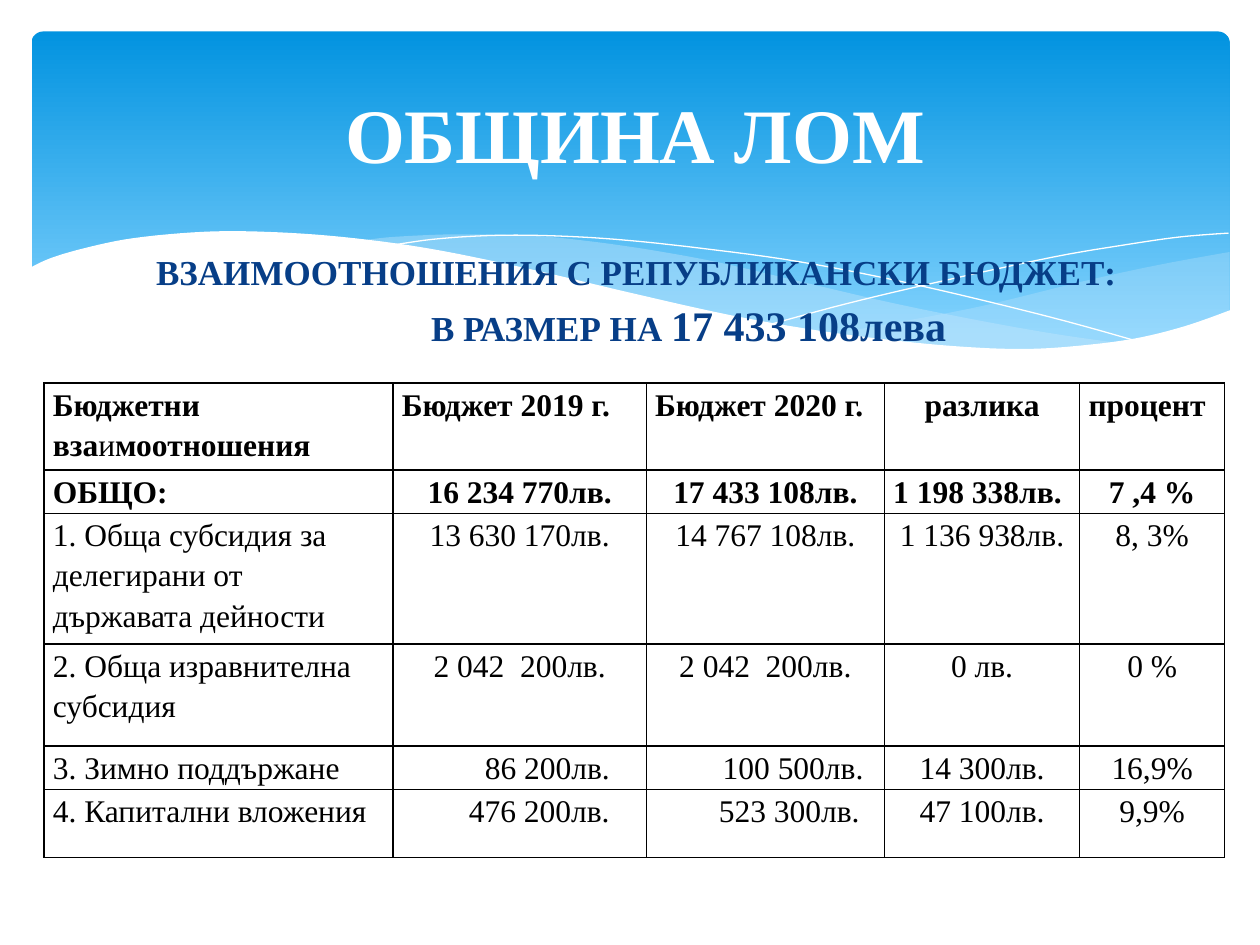
from lxml import etree
from pptx import Presentation
from pptx.dml.color import RGBColor
from pptx.enum.shapes import MSO_SHAPE
from pptx.enum.text import MSO_ANCHOR, PP_ALIGN
from pptx.oxml.ns import qn
from pptx.util import Inches, Pt

LEFT, MID = PP_ALIGN.LEFT, PP_ALIGN.CENTER
ROUND = MSO_SHAPE.ROUNDED_RECTANGLE
MIDDLE = MSO_ANCHOR.MIDDLE
SIDES = ("a:lnL", "a:lnR", "a:lnT", "a:lnB")


def color(code):
    return RGBColor.from_string(code)


def smooth(knots, steps=6):
    """Points of a Catmull-Rom curve through the knots."""
    ends = [knots[0], *knots, knots[-1]]
    points = []
    for a, b, c, d in zip(ends, ends[1:], ends[2:], ends[3:]):
        for i in range(steps):
            t = i / steps
            points.append(tuple(
                q + t * (r - p) / 2 + t * t * (p - 2.5 * q + 2 * r - s / 2)
                + t ** 3 * (1.5 * (q - r) + (s - p) / 2)
                for p, q, r, s in zip(a, b, c, d)))
    return points + [knots[-1]]


class Deck:
    font = "Times New Roman"

    def __init__(self, wide, high):
        self.prs = Presentation()
        self.prs.slide_width, self.prs.slide_height = Inches(wide), Inches(high)
        self.slide = self.prs.slides.add_slide(self.prs.slide_layouts[6])
        self.shapes = self.slide.shapes

    def panel(self, box, top, low):
        shape = self.shapes.add_shape(ROUND, *map(Inches, box))
        shape.adjustments[0] = 0.034
        shape.shadow.inherit = False
        shape.line.fill.background()
        shape.fill.gradient()
        shape.fill.gradient_angle = 270
        for stop, code, place in zip(shape.fill.gradient_stops, (top, low), (0, 0.9)):
            stop.color.rgb, stop.position = color(code), place

    def wave(self, points, fill=None, alpha=100):
        """A filled outline, or a white hairline when no fill is given."""
        spots = [(Inches(x), Inches(y)) for x, y in points]
        pen = self.shapes.build_freeform(*spots[0], scale=1.0)
        pen.add_line_segments(spots[1:], close=fill is not None)
        shape = pen.convert_to_shape()
        shape.shadow.inherit = False
        if fill is None:
            shape.fill.background()
            shape.line.color.rgb = color("FFFFFF")
            shape.line.width = 0
            return
        shape.line.fill.background()
        shape.fill.solid()
        shape.fill.fore_color.rgb = color(fill)
        if alpha < 100:
            tint = shape.fill._xPr.find(".//" + qn("a:srgbClr"))
            etree.SubElement(tint, qn("a:alpha"), val=str(alpha * 1000))

    def line(self, para, runs, code, align=LEFT, indent=0):
        """Runs are (text, size, bold)."""
        para.alignment = align
        if indent:
            para._p.get_or_add_pPr().set("marL", str(Inches(indent)))
        for text, size, bold in runs:
            run = para.add_run()
            run.text = text
            run.font.name, run.font.size, run.font.bold = self.font, Pt(size), bold
            run.font.color.rgb = color(code)

    def text(self, box, lines, code, align=LEFT, anchor=MSO_ANCHOR.TOP, before=0):
        """Lines are (indent, runs)."""
        frame = self.shapes.add_textbox(*map(Inches, box)).text_frame
        frame.word_wrap = True
        frame.vertical_anchor = anchor
        for i, (indent, runs) in enumerate(lines):
            para = frame.add_paragraph() if i else frame.paragraphs[0]
            para.space_before = Pt(before)
            self.line(para, runs, code, align, indent)

    def cell(self, cell, runs, align, indent):
        cell.margin_left = cell.margin_right = Inches(0.07)
        cell.margin_top = cell.margin_bottom = 0
        para = cell.text_frame.paragraphs[0]
        para.line_spacing = 1.15
        self.line(para, runs, "000000", align, indent)
        props = cell._tc.get_or_add_tcPr()
        for side in SIDES:
            edge = etree.SubElement(props, qn(side), w=str(Pt(1)))
            ink = etree.SubElement(edge, qn("a:solidFill"))
            etree.SubElement(ink, qn("a:srgbClr"), val="000000")
        cell.fill.background()

    def table(self, box, cols, rows, data, aligns, indents):
        grid = self.shapes.add_table(len(rows), len(cols), *map(Inches, box)).table
        grid.first_row = grid.horz_banding = False
        for col, wide in zip(grid.columns, cols):
            col.width = Inches(wide)
        for row, high in zip(grid.rows, rows):
            row.height = Inches(high)
        for r, line in enumerate(data):
            for c, value in enumerate(line):
                runs = value if isinstance(value, list) else [(value, 18, r < 2)]
                align = LEFT if c == 0 else aligns.get((r, c), MID)
                self.cell(grid.cell(r, c), runs, align, indents.get((r, c), 0))

    def save(self):
        self.prs.save("out.pptx")


# Knots of the waves in the header
BACK_TOP = [(9.76, 2), (9.21, 2.1), (8.61, 2.23), (7.79, 2.43), (7.06, 2.57), (6.61, 2.65)]
BACK_LOW = [(6.61, 2.65), (7.18, 2.73), (7.69, 2.77), (8.14, 2.78), (8.63, 2.75),
            (9.05, 2.69), (9.42, 2.59), (9.76, 2.47)]
MID_TOP = [(8.93, 2.73), (8.37, 2.65), (7.75, 2.54), (7.06, 2.4), (6.29, 2.22), (5.69, 2.08),
           (5.14, 1.98), (4.64, 1.91), (4.2, 1.87), (3.61, 1.86), (3.13, 1.88), (2.86, 1.91)]
MID_LOW = [(2.86, 1.91), (3.42, 1.99), (4.04, 2.11), (4.91, 2.32), (5.66, 2.48), (6.34, 2.61),
           (6.95, 2.7), (7.48, 2.76), (8.07, 2.79), (8.57, 2.77), (8.93, 2.73)]
LONG = [(3.09, 1.95), (3.43, 1.9), (3.87, 1.87), (4.33, 1.87), (4.89, 1.9), (5.56, 1.97),
        (6.36, 2.08), (7.27, 2.26), (8.31, 2.51), (9.07, 2.72)]
SHORT = [(6.13, 2.57), (6.72, 2.41), (7.48, 2.23), (8.36, 2.04), (8.95, 1.94), (9.37, 1.88),
         (9.75, 1.85)]
FRONT = [(9.77, 2.46), (9.4, 2.59), (8.99, 2.69), (8.5, 2.75), (8.09, 2.77), (7.61, 2.75),
         (7.08, 2.7), (6.47, 2.62), (5.79, 2.5), (5.03, 2.33), (4.18, 2.13), (3.39, 1.97),
         (2.71, 1.88), (2.11, 1.84), (1.61, 1.84), (1.06, 1.89), (0.67, 1.97), (0.4, 2.05),
         (0.23, 2.13)]

DATA = [
    [[("Бюджетни вза", 18, True), ("и", 18, False), ("моотношения", 18, True)],
     "Бюджет 2019 г.", "Бюджет 2020 г.", "разлика", "процент"],
    ["ОБЩО:", "16 234 770лв.", "17 433 108лв.", "1 198 338лв.", "7 ,4 %"],
    ["1. Обща субсидия за делегирани от държавата дейности",
     "13 630 170лв.", "14 767 108лв.", "1 136 938лв.", "8, 3%"],
    ["2. Обща изравнителна субсидия", "2 042  200лв.", "2 042  200лв.", "0 лв.", "0 %"],
    ["3. Зимно поддържане", "86 200лв.", "100 500лв.", "14 300лв.", "16,9%"],
    ["4. Капитални вложения", "476 200лв.", "523 300лв.", "47 100лв.", "9,9%"],
]
ALIGNS = {(0, 1): LEFT, (0, 2): LEFT, (0, 4): LEFT, (1, 3): LEFT}
INDENTS = {(4, 1): 0.44, (4, 2): 0.44, (5, 1): 0.31, (5, 2): 0.38}


def main():
    deck = Deck(10, 7.5)

    # Header panel and waves
    deck.panel((0.25, 0.25, 9.51, 2.7), "0293E0", "83D3FE")
    deck.wave(smooth(BACK_TOP) + smooth(BACK_LOW), "C6E7FC", 29)
    deck.wave(smooth(MID_TOP) + smooth(MID_LOW), "C6E7FC", 40)
    deck.wave(smooth(LONG))
    deck.wave(smooth(SHORT))
    deck.wave(smooth(FRONT) + [(0.23, 3.29), (9.77, 3.29)], "FFFFFF")

    # Subtitle and title
    deck.text((1, 1.94, 8.1, 4.84), [
        (0, [("ВЗАИМООТНОШЕНИЯ С РЕПУБЛИКАНСКИ БЮДЖЕТ:", 20, True)]),
        (0.83, [("В РАЗМЕР НА ", 20, True), ("17 433 108лева", 24, True)]),
    ], "073E87", MID, before=4)
    deck.text((0.5, 0.37, 9, 1.37), [(2.14, [("ОБЩИНА ЛОМ", 44, True)])],
              "FFFFFF", anchor=MIDDLE)

    # Budget table
    deck.table((0.35, 3.04, 9.37, 3.76), (2.77, 2.01, 1.89, 1.55, 1.15),
               (0.47, 0.27, 0.81, 0.81, 0.27, 0.54), DATA, ALIGNS, INDENTS)
    deck.save()


if __name__ == "__main__":
    main()
